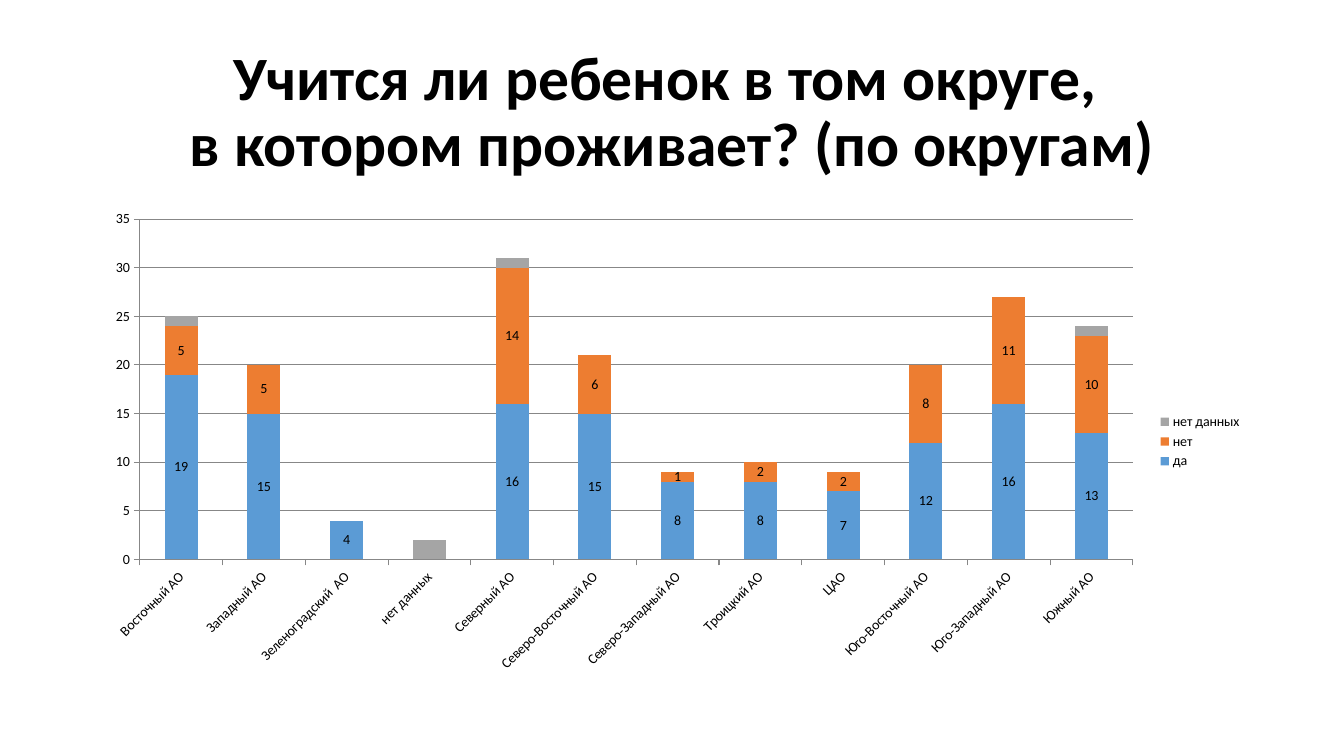
"""Build a slide with a stacked column chart of schooling by home district."""
from pptx import Presentation
from pptx.chart.data import CategoryChartData
from pptx.dml.color import RGBColor
from pptx.enum.chart import XL_CHART_TYPE, XL_LABEL_POSITION, XL_LEGEND_POSITION, XL_TICK_MARK
from pptx.enum.text import MSO_ANCHOR, PP_ALIGN
from pptx.util import Inches, Pt

STACKED = XL_CHART_TYPE.COLUMN_STACKED
LABEL_CENTER = XL_LABEL_POSITION.CENTER
LEGEND_RIGHT = XL_LEGEND_POSITION.RIGHT
TICK_OUTSIDE = XL_TICK_MARK.OUTSIDE
MIDDLE = MSO_ANCHOR.MIDDLE
CENTER = PP_ALIGN.CENTER

BLACK = RGBColor(0x00, 0x00, 0x00)
GRAY = RGBColor(0x87, 0x87, 0x87)
BLUE = RGBColor(0x5B, 0x9B, 0xD5)
ORANGE = RGBColor(0xED, 0x7D, 0x31)
SILVER = RGBColor(0xA5, 0xA5, 0xA5)
FONT = "Calibri"

QUESTION = ["Учится ли ребенок в том округе, ", "в котором проживает? (по округам)"]
DISTRICTS = [
    "Восточный АО", "Западный АО", "Зеленоградский  АО", "нет данных",
    "Северный АО", "Северо-Восточный АО", "Северо-Западный АО", "Троицкий АО",
    "ЦАО", "Юго-Восточный АО", "Юго-Западный АО", "Южный АО",
]
ANSWERS = [
    ("да", BLUE, True, [19, 15, 4, None, 16, 15, 8, 8, 7, 12, 16, 13]),
    ("нет", ORANGE, True, [5, 5, None, None, 14, 6, 1, 2, 2, 8, 11, 10]),
    ("нет данных", SILVER, False,
     [1, None, None, 2, 1, None, None, None, None, None, None, 1]),
]

LEFT, WIDTH = Inches(0.92), Inches(11.5)
QUESTION_TOP, QUESTION_HEIGHT = Inches(0.4), Inches(1.45)
CHART_TOP, CHART_HEIGHT = Inches(2), Inches(4.76)


def format_font(font, size, color=BLACK, bold=False):
    font.name = FONT
    font.size = Pt(size)
    font.bold = bold
    font.color.rgb = color


def add_text(slide, lines, box, size, color=BLACK, bold=False, align=CENTER, spacing=1.0):
    frame = slide.shapes.add_textbox(*box).text_frame
    frame.word_wrap = True
    frame.vertical_anchor = MIDDLE
    paragraph = frame.paragraphs[0]
    paragraph.alignment = align
    paragraph.line_spacing = spacing
    for index, line in enumerate(lines):
        if index:
            paragraph.add_line_break()
        run = paragraph.add_run()
        run.text = line
        format_font(run.font, size, color, bold)


def add_answers_chart(slide):
    answers_data = CategoryChartData()
    answers_data.categories = DISTRICTS
    for answer, _, _, counts in ANSWERS:
        answers_data.add_series(answer, counts)
    chart = slide.shapes.add_chart(
        STACKED, LEFT, CHART_TOP, WIDTH, CHART_HEIGHT, answers_data).chart
    format_font(chart.font, 10)
    chart.has_title = False
    chart.has_legend = True
    chart.legend.position = LEGEND_RIGHT
    chart.legend.include_in_layout = False

    for axis in (chart.category_axis, chart.value_axis):
        axis.major_tick_mark = TICK_OUTSIDE
        axis.format.line.color.rgb = GRAY
        axis.format.line.width = Pt(0.75)
    counts_axis = chart.value_axis
    counts_axis.minimum_scale, counts_axis.maximum_scale = 0, 35
    counts_axis.major_unit = 5
    counts_axis.major_gridlines.format.line.color.rgb = GRAY
    counts_axis.major_gridlines.format.line.width = Pt(0.75)

    plot = chart.plots[0]
    plot.gap_width = 150
    plot.overlap = 100
    plot.vary_by_categories = False
    for series, (_, color, labelled, _) in zip(plot.series, ANSWERS):
        series.format.fill.solid()
        series.format.fill.fore_color.rgb = color
        if labelled:
            labels = series.data_labels
            labels.show_value = True
            labels.position = LABEL_CENTER
            format_font(labels.font, 10)


def main():
    presentation = Presentation()
    presentation.slide_width = Inches(13.33)
    presentation.slide_height = Inches(7.5)
    slide = presentation.slides.add_slide(presentation.slide_layouts[6])
    add_text(slide, QUESTION, (LEFT, QUESTION_TOP, WIDTH, QUESTION_HEIGHT),
             size=44, bold=True, spacing=0.9)
    add_answers_chart(slide)
    presentation.save("out.pptx")


if __name__ == "__main__":
    main()
